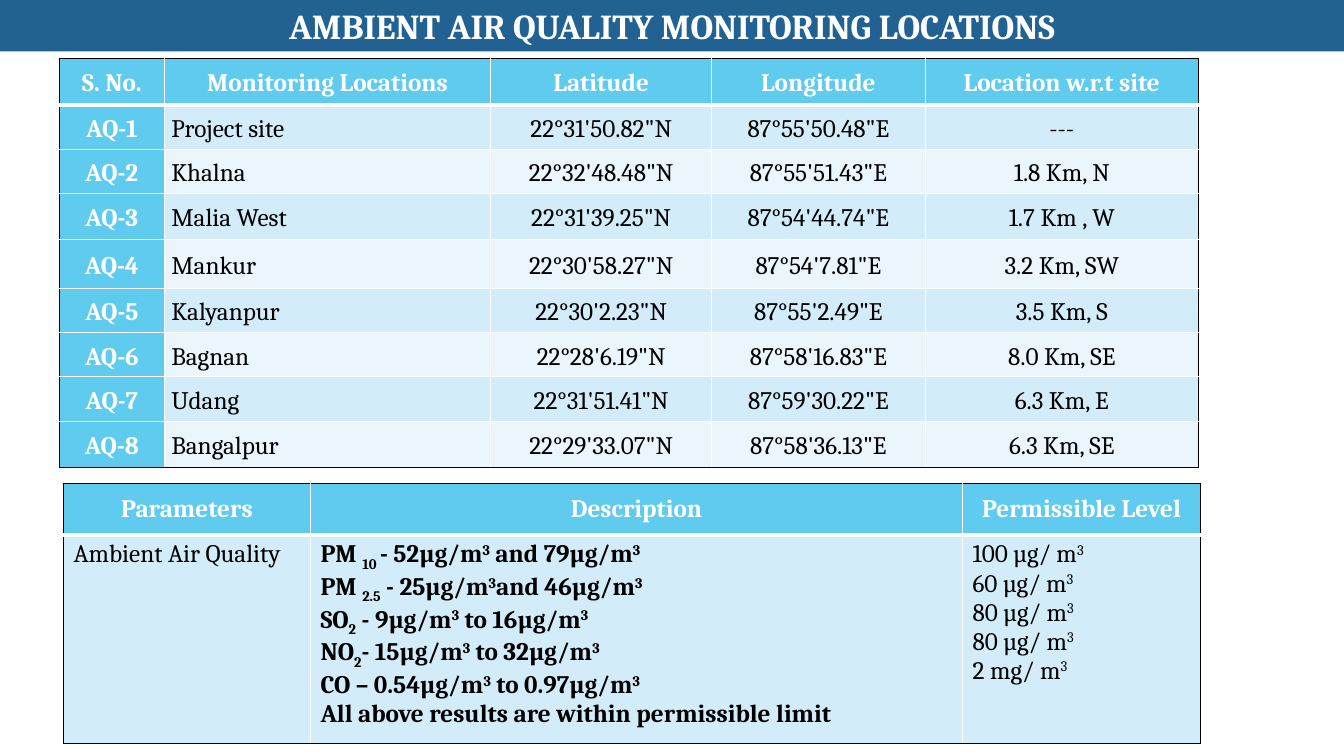
from lxml.etree import SubElement
from pptx import Presentation
from pptx.dml.color import RGBColor
from pptx.enum.shapes import MSO_SHAPE
from pptx.enum.text import MSO_ANCHOR, PP_ALIGN
from pptx.oxml.ns import qn
from pptx.util import Pt

# Content: in rich text "|" splits runs, "^" raises a run and "_" lowers it
TITLE = "AMBIENT AIR QUALITY MONITORING LOCATIONS"
LOCATIONS = [
    ("S. No.", "Monitoring Locations", "Latitude", "Longitude", "Location w.r.t site"),
    ("AQ-1", "Project site", "22°31'50.82\"N", "87°55'50.48\"E", "---"),
    ("AQ-2", "Khalna", "22°32'48.48\"N", "87°55'51.43\"E", "1.8 Km, N"),
    ("AQ-3", "Malia West", "22°31'39.25\"N", "87°54'44.74\"E", "1.7 Km , W"),
    ("AQ-4", "Mankur", "22°30'58.27\"N", "87°54'7.81\"E", "3.2 Km, SW"),
    ("AQ-5", "Kalyanpur", "22°30'2.23\"N", "87°55'2.49\"E", "3.5 Km, S"),
    ("AQ-6", "Bagnan", "22°28'6.19\"N", "87°58'16.83\"E", "8.0 Km, SE"),
    ("AQ-7", "Udang", "22°31'51.41\"N", "87°59'30.22\"E", "6.3 Km, E"),
    ("AQ-8", "Bangalpur", "22°29'33.07\"N", "87°58'36.13\"E", "6.3 Km, SE"),
]
RESULTS = [
    "PM |_10 |- 52µg/m|^3| and 79µg/m|^3",
    "PM |_2.5| - 25µg/m|^3|and 46µg/m|^3",
    "SO|_2| - 9µg/m|^3| to 16µg/m|^3",
    "NO|_2|- 15µg/m|^3| to 32µg/m|^3",
    "CO – 0.54µg/m|^3| to 0.97µg/m|^3",
    "All above results are within permissible limit",
]
LIMITS = ["100 µg/ m|^3", "60 µg/ m|^3", "80 µg/ m|^3", "80 µg/ m|^3", "2 mg/ m|^3"]
PARAMETERS = [
    (["Parameters"], ["Description"], ["Permissible Level"]),
    (["Ambient Air Quality"], RESULTS, LIMITS),
]

# Style
FONT = "Cambria"
BASELINES = {"^": "30000", "_": "-25000"}
WHITE = RGBColor(0xFF, 0xFF, 0xFF)
BLACK = RGBColor(0x00, 0x00, 0x00)
BANNER_BLUE = RGBColor(0x22, 0x62, 0x92)
HEADER_BLUE = RGBColor(0x5F, 0xCB, 0xEF)
BAND_DARK = RGBColor(0xD2, 0xEC, 0xF9)
BAND_LIGHT = RGBColor(0xEA, 0xF6, 0xFC)

# Geometry in points
LOCATION_COLUMNS = [74.88, 233.28, 157.68, 152.64, 195.12]
LOCATION_ROWS = [33.12, 31.68, 31.68, 33.12, 34.56, 31.68, 31.68, 31.68, 33.12]
PARAMETER_COLUMNS = [176.4, 465.84, 169.92]
PARAMETER_ROWS = [36.72, 148.5]


def write_rich(paragraph, text, size, color, bold):
    for part in text.split("|"):
        run = paragraph.add_run()
        run.text = part.lstrip("^_")
        run.font.name = FONT
        run.font.size = Pt(size)
        run.font.bold = bold
        run.font.color.rgb = color
        if part[0] in BASELINES:
            run._r.get_or_add_rPr().set("baseline", BASELINES[part[0]])


def fill_cell(cell, lines, fill, color, bold, align, spacing=None):
    cell.fill.solid()
    cell.fill.fore_color.rgb = fill
    text_frame = cell.text_frame
    for index, line in enumerate(lines):
        paragraph = text_frame.add_paragraph() if index else text_frame.paragraphs[0]
        paragraph.alignment = align
        if spacing:
            paragraph.line_spacing = spacing
        write_rich(paragraph, line, 18, color, bold)


def center_cell(cell, side):
    cell.vertical_anchor = MSO_ANCHOR.MIDDLE
    cell.margin_left = cell.margin_right = Pt(side)
    cell.margin_top = cell.margin_bottom = Pt(0)


def draw_borders(cell, edges):
    for side, (color, width) in edges.items():
        line = SubElement(cell._tc.get_or_add_tcPr(), qn(f"a:ln{side}"), w=str(Pt(width)))
        solid = SubElement(line, qn("a:solidFill"))
        SubElement(solid, qn("a:srgbClr"), val=str(color))


def add_grid(slide, left, top, widths, heights):
    """Table with a black outline, white inner lines and a thick line below the header."""
    frame = slide.shapes.add_table(len(heights), len(widths), Pt(left), Pt(top),
                                   Pt(sum(widths)), Pt(sum(heights)))
    table = frame.table
    table.first_row = table.horz_banding = False
    for column, width in zip(table.columns, widths):
        column.width = Pt(width)
    for row, height in zip(table.rows, heights):
        row.height = Pt(height)
    last_row, last_column = len(heights) - 1, len(widths) - 1
    for r in range(len(heights)):
        for c in range(len(widths)):
            draw_borders(table.cell(r, c), {
                "L": (WHITE if c else BLACK, 1),
                "R": (BLACK if c == last_column else WHITE, 1),
                "T": (WHITE if r else BLACK, 3 if r == 1 else 1),
                "B": (BLACK if r == last_row else WHITE, 1 if r else 3),
            })
    return table


presentation = Presentation()
presentation.slide_width, presentation.slide_height = Pt(960), Pt(540)
slide = presentation.slides.add_slide(presentation.slide_layouts[6])

# Parameter table
table = add_grid(slide, 45.36, 345.6, PARAMETER_COLUMNS, PARAMETER_ROWS)
for c, lines in enumerate(PARAMETERS[0]):
    center_cell(table.cell(0, c), 3.6)
    fill_cell(table.cell(0, c), lines, HEADER_BLUE, WHITE, True, PP_ALIGN.CENTER)
for c, lines in enumerate(PARAMETERS[1]):
    align = PP_ALIGN.JUSTIFY if lines is LIMITS else PP_ALIGN.LEFT
    fill_cell(table.cell(1, c), lines, BAND_DARK, BLACK, lines is RESULTS, align)

# Location table
table = add_grid(slide, 42.48, 41.76, LOCATION_COLUMNS, LOCATION_ROWS)
for r, row in enumerate(LOCATIONS):
    for c, text in enumerate(row):
        heading = r == 0 or c == 0
        band = BAND_DARK if r % 2 else BAND_LIGHT
        align = PP_ALIGN.LEFT if r and c == 1 else PP_ALIGN.CENTER
        center_cell(table.cell(r, c), 5.04)
        fill_cell(table.cell(r, c), [text], HEADER_BLUE if heading else band,
                  WHITE if heading else BLACK, heading, align, 1.15)

# Title banner
banner = slide.shapes.add_shape(MSO_SHAPE.RECTANGLE, Pt(0), Pt(-0.72), Pt(960), Pt(37.44))
banner.shadow.inherit = False
banner.fill.solid()
banner.fill.fore_color.rgb = BANNER_BLUE
banner.line.fill.background()
banner.text_frame.word_wrap = True
banner.text_frame.vertical_anchor = MSO_ANCHOR.MIDDLE
paragraph = banner.text_frame.paragraphs[0]
paragraph.alignment = PP_ALIGN.CENTER
write_rich(paragraph, TITLE, 25, WHITE, True)

presentation.save("out.pptx")
